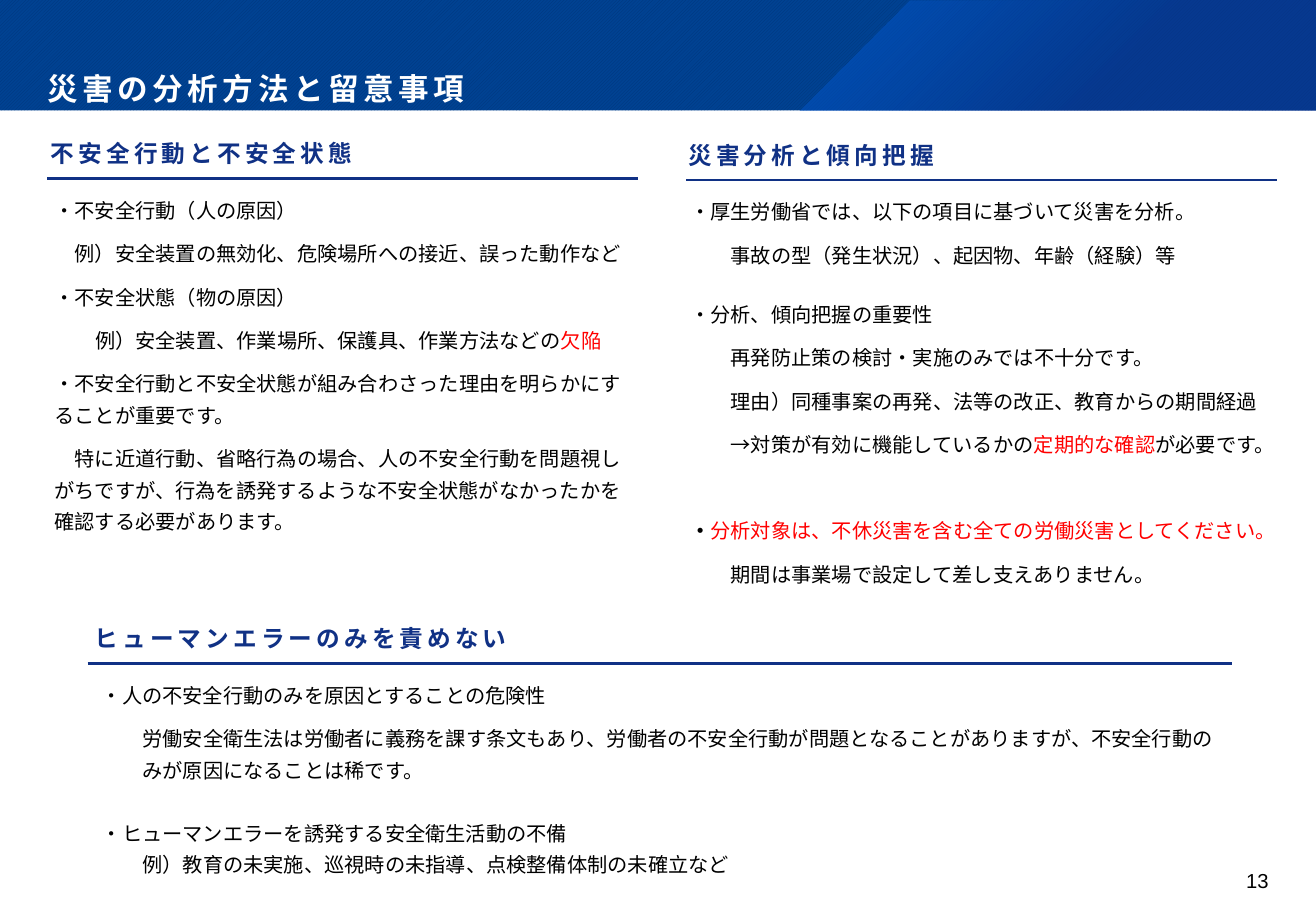
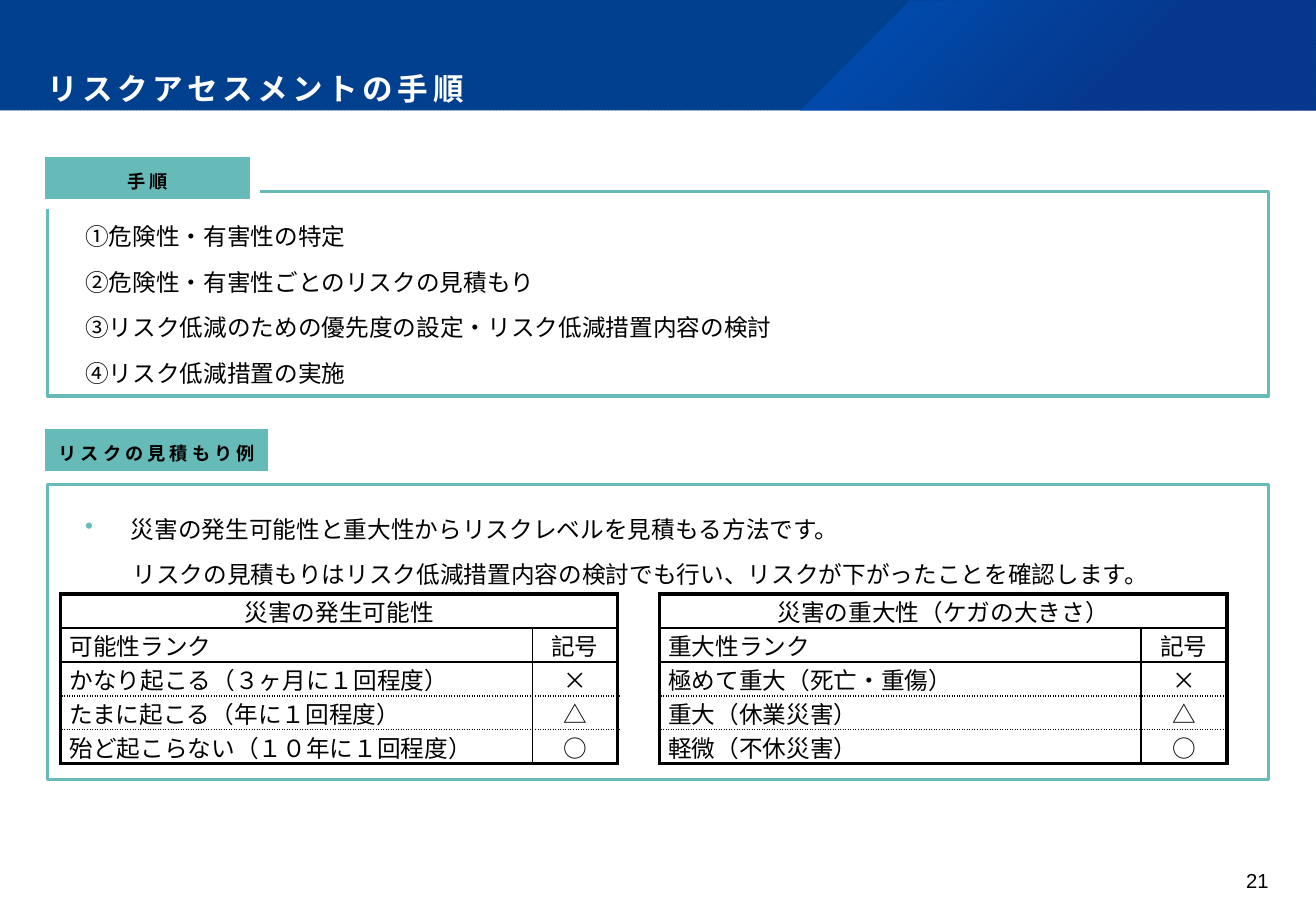
"""Build two Japanese training slides on accident analysis and risk assessment."""
from dataclasses import dataclass

from lxml.etree import SubElement
from pptx import Presentation
from pptx.dml.color import RGBColor
from pptx.enum.dml import MSO_PATTERN
from pptx.enum.shapes import MSO_CONNECTOR, MSO_SHAPE
from pptx.enum.text import MSO_ANCHOR, PP_ALIGN
from pptx.oxml import parse_xml
from pptx.oxml.ns import nsdecls, qn
from pptx.util import Cm, Pt

RECTANGLE = MSO_SHAPE.RECTANGLE
STRAIGHT = MSO_CONNECTOR.STRAIGHT
DIAGONAL = MSO_PATTERN.DARK_UPWARD_DIAGONAL
TOP, MIDDLE, BOTTOM = MSO_ANCHOR.TOP, MSO_ANCHOR.MIDDLE, MSO_ANCHOR.BOTTOM
LEFT, CENTER, RIGHT, JUSTIFY = PP_ALIGN.LEFT, PP_ALIGN.CENTER, PP_ALIGN.RIGHT, PP_ALIGN.JUSTIFY

SLIDE_WIDTH, SLIDE_HEIGHT, BAND_HEIGHT = 27.51, 19.05, 2.31
NO_INSETS = (0, 0, 0, 0)


@dataclass(frozen=True)
class TextStyle:
    font: str
    size: float
    color: str = "000000"
    bold: bool = False
    tracking: float = 0
    spacing: float = 1.0
    after: float = 0
    align: PP_ALIGN = LEFT


@dataclass(frozen=True)
class Theme:
    black: str = "000000"
    white: str = "FFFFFF"
    red: str = "FF0000"
    navy: str = "103185"
    teal: str = "66BAB7"
    band_stripe: str = "003579"
    band: str = "004292"
    glow: str = "0064DF"
    glow_edge: str = "0C338E"
    title: TextStyle = TextStyle("Roboto", 18.1, "FFFFFF", True, 2.7, 0.9)
    heading: TextStyle = TextStyle("Noto Sans CJK JP", 14, "103185", True, 2.4, 1.3, 8)
    body: TextStyle = TextStyle("Roboto", 12, spacing=1.3, after=7)
    tab: TextStyle = TextStyle("Noto Sans CJK JP", 10.8, "000000", True, 2.4, 1.3, 8, CENTER)
    panel: TextStyle = TextStyle("Noto Sans CJK JP", 14, spacing=1.2, after=7)
    cell: TextStyle = TextStyle("Noto Sans CJK JP", 14, align=JUSTIFY)
    cell_center: TextStyle = TextStyle("Noto Sans CJK JP", 14, align=CENTER)
    page: TextStyle = TextStyle("Arial", 12, align=RIGHT)


THEME = Theme()


@dataclass(frozen=True)
class Span:
    text: str
    color: str | None = None
    bold: bool | None = None


@dataclass(frozen=True)
class Line:
    spans: tuple[Span, ...]
    margin: float = 0
    first: float = 0
    after: float | None = None
    bullet: str = ""


@dataclass(frozen=True)
class Section:
    heading: str
    left: float
    top: float
    width: float
    inset: float
    body_width: float
    body_height: float
    lines: tuple[Line, ...]


@dataclass(frozen=True)
class Panel:
    tab: str
    tab_top: float
    tab_width: float
    top: float
    height: float
    lines: tuple[Line, ...]


@dataclass(frozen=True)
class RankTable:
    left: float
    columns: tuple[float, float]
    title: str
    rows: tuple[tuple[str, str], ...]


def line(text: str, ems: float = 0, after: float | None = None) -> Line:
    """Make a plain body line indented by whole characters."""
    return Line((Span(text),), ems * THEME.body.size, 0, after)


def rgb(color: str) -> RGBColor:
    """Turn a hex string into a colour."""
    return RGBColor.from_string(color)


def write_text(frame, lines, style, insets=NO_INSETS, anchor=TOP) -> None:
    """Fill a text frame or table cell frame with styled lines."""
    frame.word_wrap = True
    frame.vertical_anchor = anchor
    frame.margin_left, frame.margin_top, frame.margin_right, frame.margin_bottom = map(Cm, insets)
    for index, item in enumerate(lines):
        paragraph = frame.paragraphs[0] if index == 0 else frame.add_paragraph()
        write_line(paragraph, item, style)


def write_line(paragraph, item: Line, style: TextStyle) -> None:
    """Write one paragraph with its font, spacing, indent and bullet."""
    paragraph.alignment = style.align
    paragraph.line_spacing = style.spacing
    paragraph.space_after = Pt(style.after if item.after is None else item.after)
    font = paragraph.font
    font.name, font.size, font.bold = style.font, Pt(style.size), style.bold
    font.color.rgb = rgb(style.color)
    properties = paragraph._p.get_or_add_pPr()
    properties.set("marL", str(Pt(item.margin)))
    properties.set("indent", str(Pt(item.first)))
    defaults = properties.find(qn("a:defRPr"))
    SubElement(defaults, qn("a:ea")).set("typeface", style.font)
    if style.tracking:
        defaults.set("spc", str(round(style.tracking * 100)))
    if item.bullet:
        color = f'<a:buClr {nsdecls("a")}><a:srgbClr val="{THEME.teal}"/></a:buClr>'
        defaults.addprevious(parse_xml(color))
        defaults.addprevious(parse_xml(f'<a:buChar {nsdecls("a")} char="{item.bullet}"/>'))
    for span in item.spans:
        run = paragraph.add_run()
        run.text = span.text
        if span.color:
            run.font.color.rgb = rgb(span.color)
        if span.bold is not None:
            run.font.bold = span.bold


def add_text(slide, left, top, width, height, lines, style, insets=NO_INSETS, anchor=TOP) -> None:
    """Add a text box measured in centimetres."""
    box = slide.shapes.add_textbox(Cm(left), Cm(top), Cm(width), Cm(height))
    write_text(box.text_frame, lines, style, insets, anchor)


def add_box(slide, left, top, width, height):
    """Add a rectangle without shadow, fill or outline."""
    shape = slide.shapes.add_shape(RECTANGLE, Cm(left), Cm(top), Cm(width), Cm(height))
    shape.shadow.inherit = False
    shape.fill.background()
    shape.line.fill.background()
    return shape


def add_frame(slide, title: str, page: int) -> None:
    """Draw the title band and the page number."""
    band = add_box(slide, 0, 0, SLIDE_WIDTH, BAND_HEIGHT)
    band.fill.patterned()
    band.fill.pattern = DIAGONAL
    band.fill.fore_color.rgb = rgb(THEME.band_stripe)
    band.fill.back_color.rgb = rgb(THEME.band)
    builder = slide.shapes.build_freeform(Cm(19.02), Cm(0.02))
    corners = ((SLIDE_WIDTH, 0), (SLIDE_WIDTH, BAND_HEIGHT), (16.71, BAND_HEIGHT))
    builder.add_line_segments([(Cm(x), Cm(y)) for x, y in corners], close=True)
    glow = builder.convert_to_shape()
    glow.shadow.inherit = False
    glow.line.fill.background()
    stops = "".join(
        f'<a:gs pos="{position}000"><a:srgbClr val="{color}"><a:alpha val="{alpha}000"/></a:srgbClr></a:gs>'
        for position, color, alpha in ((0, THEME.glow, 50), (62, THEME.glow_edge, 55))
    )
    gradient = parse_xml(
        f'<a:gradFill {nsdecls("a")} rotWithShape="1"><a:gsLst>{stops}</a:gsLst>'
        '<a:path path="circle"><a:fillToRect r="100000" b="100000"/></a:path></a:gradFill>'
    )
    glow._element.spPr.find(qn("a:custGeom")).addnext(gradient)
    add_text(slide, 0, 0, SLIDE_WIDTH, BAND_HEIGHT, [line(title)], THEME.title,
             (0.99, 0.91, 0.91, 0.36), BOTTOM)
    add_text(slide, 24.77, 18.16, 1.75, 0.76, [line(str(page))], THEME.page)


def add_section(slide, section: Section) -> None:
    """Draw a heading, its rule and the text below."""
    add_text(slide, section.left + section.inset / 2, section.top - 1, section.width, 0.79,
             [line(section.heading)], THEME.heading)
    rule = slide.shapes.add_connector(STRAIGHT, Cm(section.left), Cm(section.top),
                                      Cm(section.left + section.width), Cm(section.top))
    rule.line.color.rgb = rgb(THEME.navy)
    rule.line.width = Pt(1.5)
    SubElement(rule._element.spPr, qn("a:effectLst"))
    add_text(slide, section.left + section.inset, section.top + 0.26, section.body_width,
             section.body_height, section.lines, THEME.body)


def add_panel(slide, panel: Panel) -> None:
    """Draw an outlined panel with its label tab."""
    frame = add_box(slide, 0.99, panel.top, 25.53, panel.height)
    frame.line.color.rgb = rgb(THEME.teal)
    frame.line.width = Pt(2)
    write_text(frame.text_frame, panel.lines, THEME.panel, (0.79, 0.51, 0.41, 0.51))
    tab = add_box(slide, 0.84, panel.tab_top, panel.tab_width, 1.09)
    tab.fill.solid()
    tab.fill.fore_color.rgb = rgb(THEME.teal)
    tab.line.color.rgb = rgb(THEME.white)
    tab.line.width = Pt(6)
    write_text(tab.text_frame, [line(panel.tab)], THEME.tab, (0.25, 0.13, 0.25, 0.13), MIDDLE)


def set_border(cell, side: str, width: float, dash: str) -> None:
    """Give one side of a cell a black line."""
    cell._tc.get_or_add_tcPr().append(parse_xml(
        f'<a:ln{side} {nsdecls("a")} w="{Pt(width)}"><a:solidFill><a:srgbClr val="{THEME.black}"/>'
        f'</a:solidFill><a:prstDash val="{dash}"/></a:ln{side}>'
    ))


def add_rank_table(slide, ranks: RankTable) -> None:
    """Draw a rank table with a thick frame and dotted row lines."""
    rows = ((ranks.title, ""),) + ranks.rows
    last, row_height = len(rows) - 1, 0.71
    graphic = slide.shapes.add_table(len(rows), 2, Cm(ranks.left), Cm(12.42),
                                     Cm(sum(ranks.columns)), Cm(row_height * len(rows)))
    table = graphic.table
    table.first_row = table.horz_banding = False
    for column, width in zip(table.columns, ranks.columns):
        column.width = Cm(width)
    table.cell(0, 0).merge(table.cell(0, 1))
    for r, texts in enumerate(rows):
        table.rows[r].height = Cm(row_height)
        for c, text in enumerate(texts):
            cell = table.cell(r, c)
            outer = {"L": c == 0, "R": c == 1 or r == 0, "T": r == 0, "B": r == last}
            dotted = {"T": 2 < r, "B": 1 < r < last}
            for side, thick in outer.items():
                set_border(cell, side, 2.25 if thick else 1, "sysDot" if dotted.get(side) else "solid")
            cell.fill.background()
            cell.vertical_anchor = MIDDLE
            cell.margin_left = cell.margin_right = Cm(0.18)
            cell.margin_top = cell.margin_bottom = 0
            if text:
                style = THEME.cell_center if r == 0 or c == 1 else THEME.cell
                write_line(cell.text_frame.paragraphs[0], line(text), style)


SECTIONS = (
    Section("災害分析と傾向把握", 14.35, 3.76, 12.35, 0.08, 12.01, 8.33, (
        line("・厚生労働省では、以下の項目に基づいて災害を分析。"),
        line("事故の型（発生状況）、起因物、年齢（経験）等", 2, 16.5),
        line("・分析、傾向把握の重要性"),
        line("再発防止策の検討・実施のみでは不十分です。", 2),
        line("理由）同種事案の再発、法等の改正、教育からの期間経過", 2),
        Line((Span("→対策が有効に機能しているかの"), Span("定期的な確認", THEME.red),
              Span("が必要です。")), 24, after=32.5),
        Line((Span("・", bold=True),
              Span("分析対象は、不休災害を含む全ての労働災害としてください。", THEME.red))),
        line("期間は事業場で設定して差し支えありません。", 2),
    )),
    Section("不安全行動と不安全状態", 0.99, 3.73, 12.35, 0.15, 12.01, 7.24, (
        line("・不安全行動（人の原因）"),
        line("例）安全装置の無効化、危険場所への接近、誤った動作など", 1),
        line("・不安全状態（物の原因）"),
        Line((Span("例）安全装置、作業場所、保護具、作業方法などの"), Span("欠陥", THEME.red)), 24),
        line("・不安全行動と不安全状態が組み合わさった理由を明らかにすることが重要です。"),
        Line((Span("特に近道行動、省略行為の場合、人の不安全行動を問題視しがちですが、"
                   "行為を誘発するような不安全状態がなかったかを確認する必要があります。"),), 0, 12),
    )),
    Section("ヒューマンエラーのみを責めない", 1.83, 13.87, 23.93, 0.3, 23.29, 4.24, (
        line("・人の不安全行動のみを原因とすることの危険性"),
        line("労働安全衛生法は労働者に義務を課す条文もあり、労働者の不安全行動が問題となることがありますが、"
             "不安全行動のみが原因になることは稀です。", 2, 18.7),
        line("・ヒューマンエラーを誘発する安全衛生活動の不備", 0, 0),
        line("例）教育の未実施、巡視時の未指導、点検整備体制の未確立など", 2),
    )),
)
PANELS = (
    Panel("手順", 3.18, 4.5, 4.01, 4.27, (
        line("①危険性・有害性の特定"),
        line("②危険性・有害性ごとのリスクの見積もり"),
        line("③リスク低減のための優先度の設定・リスク低減措置内容の検討"),
        line("④リスク低減措置の実施"),
    )),
    Panel("リスクの見積もり例", 8.86, 4.88, 10.13, 6.17, (
        Line((Span("災害の発生可能性と重大性からリスクレベルを見積もる方法です。"),), 27, -27, bullet="•"),
        Line((Span("リスクの見積もりはリスク低減措置内容の検討でも行い、リスクが下がったことを確認します。"),), 28),
    )),
)
TABLES = (
    RankTable(1.27, (9.86, 1.78), "災害の発生可能性", (
        ("可能性ランク", "記号"), ("かなり起こる（３ヶ月に１回程度）", "×"),
        ("たまに起こる（年に１回程度）", "△"), ("殆ど起こらない（１０年に１回程度）", "○"))),
    RankTable(13.79, (10.06, 1.8), "災害の重大性（ケガの大きさ）", (
        ("重大性ランク", "記号"), ("極めて重大（死亡・重傷）", "×"),
        ("重大（休業災害）", "△"), ("軽微（不休災害）", "○"))),
)


def main() -> None:
    """Build and save the presentation."""
    presentation = Presentation()
    presentation.slide_width, presentation.slide_height = Cm(SLIDE_WIDTH), Cm(SLIDE_HEIGHT)
    blank = presentation.slide_layouts[6]
    analysis = presentation.slides.add_slide(blank)
    add_frame(analysis, "災害の分析方法と留意事項", 13)
    for section in SECTIONS:
        add_section(analysis, section)
    assessment = presentation.slides.add_slide(blank)
    add_frame(assessment, "リスクアセスメントの手順", 21)
    for panel in PANELS:
        add_panel(assessment, panel)
    for ranks in TABLES:
        add_rank_table(assessment, ranks)
    presentation.save("out.pptx")


if __name__ == "__main__":
    main()
